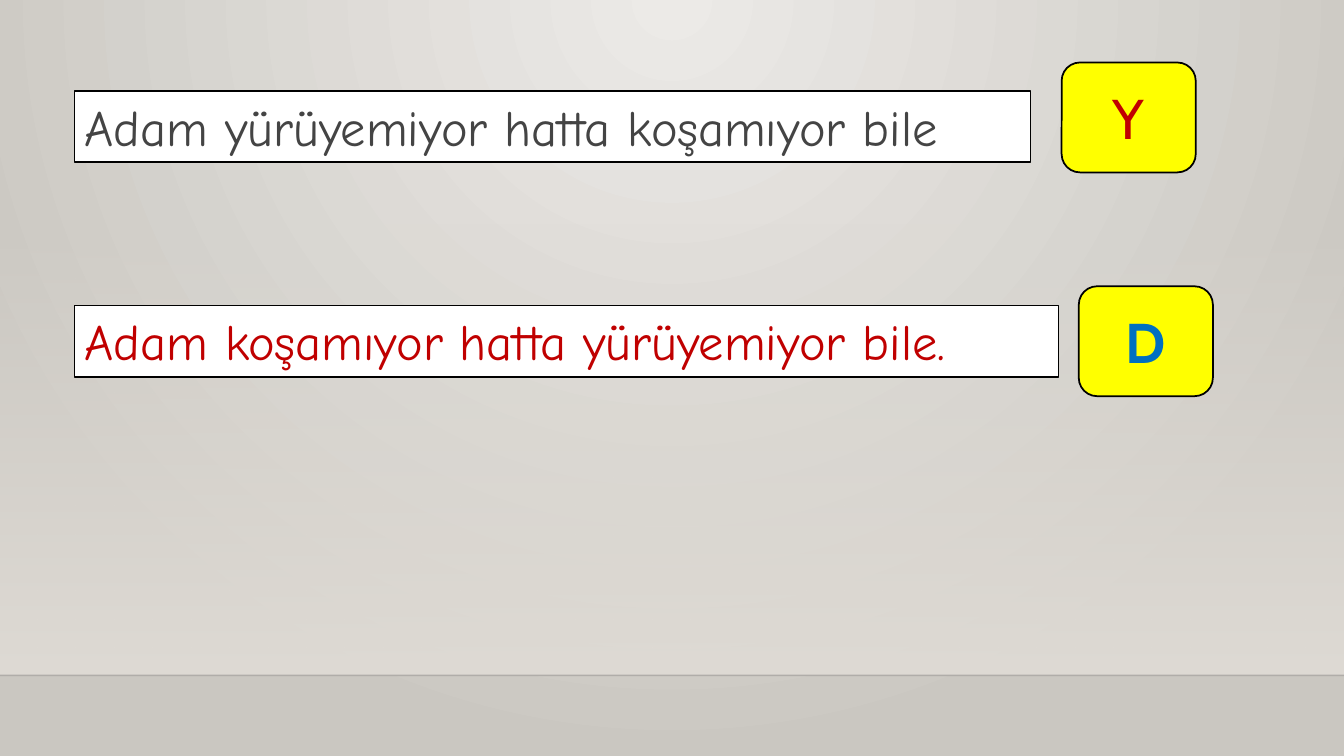
import pptx
import pptx.dml.color
import pptx.enum.shapes
import pptx.enum.text
import pptx.oxml
import pptx.oxml.ns
import pptx.util

Inches = pptx.util.Inches
RGBColor = pptx.dml.color.RGBColor
Shape = pptx.enum.shapes.MSO_SHAPE
Anchor = pptx.enum.text.MSO_ANCHOR
Align = pptx.enum.text.PP_ALIGN
qn = pptx.oxml.ns.qn

WHITE = RGBColor(0xFF, 0xFF, 0xFF)
BLACK = RGBColor(0, 0, 0)
INK = RGBColor(0, 0, 1)
YELLOW = RGBColor(0xFF, 0xFF, 0)
GREY = RGBColor(0x44, 0x44, 0x44)
RED = RGBColor(0xC0, 0, 0)
BLUE = RGBColor(0, 0x70, 0xC0)
PALE = RGBColor(0xEC, 0xEA, 0xE7)
STONE = RGBColor(0xCA, 0xC7, 0xC1)
SAND = RGBColor(0xDF, 0xDB, 0xD5)


def node(text):
    """Parse a DrawingML element."""
    space = 'xmlns:a="http://schemas.openxmlformats.org/drawingml/2006/main"'
    return pptx.oxml.parse_xml(text.replace("XMLNS", space))


def fade(color, share):
    """Give a colour element an opacity in percent."""
    color.append(node(f'<a:alpha XMLNS val="{share * 1000}"/>'))


def blend(fill, first, last):
    """Set a gradient between two colours."""
    fill.gradient()
    for stop, color, place in zip(fill.gradient_stops, (first, last), (0, 1)):
        stop.color.rgb = color
        stop.position = place


def backdrop(slide):
    """Fill the background with light falling from the top centre."""
    blend(slide.background.fill, PALE, STONE)
    lin = next(slide._element.iter(qn("a:lin")))
    lin.getparent().replace(lin, node(
        '<a:path XMLNS path="circle"><a:fillToRect l="43000" t="0" '
        'r="43000" b="100000"/></a:path>'))


def floor(slide, left, top, width, height):
    """Draw the wall haze and the line along its foot."""
    haze = slide.shapes.add_shape(
        Shape.RECTANGLE, left, top, width, height)
    haze.shadow.inherit = False
    haze.line.fill.background()
    blend(haze.fill, SAND, SAND)
    haze.fill.gradient_angle = 270
    fade(next(haze.element.iter(qn("a:srgbClr"))), 0)
    foot = top + height
    edge = slide.shapes.add_connector(
        pptx.enum.shapes.MSO_CONNECTOR.STRAIGHT,
        left, foot, left + width, foot)
    edge.line.width = pptx.util.Pt(1)
    edge.line.color.rgb = INK
    fade(next(edge.element.iter(qn("a:srgbClr"))), 20)
    edge.element.spPr.append(node("<a:effectLst XMLNS/>"))


def panel(slide, kind, box, fill, text, font, size, color, bold=False):
    """Draw an outlined shape with one line of text."""
    shape = slide.shapes.add_shape(kind, *map(Inches, box))
    shape.shadow.inherit = False
    shape.fill.solid()
    shape.fill.fore_color.rgb = fill
    shape.line.color.rgb = BLACK
    shape.line.width = pptx.util.Pt(1.25)
    run = shape.text_frame.paragraphs[0].add_run()
    run.text = text
    run.font.name = font
    run.font.size = pptx.util.Pt(size)
    run.font.color.rgb = color
    run.font.bold = bold
    return shape.text_frame


def phrase(slide, box, text, color):
    """Draw a sentence bar."""
    frame = panel(slide, Shape.RECTANGLE, box, WHITE, text,
                  "Comic Neue", 36, color)
    frame.word_wrap = True
    frame.vertical_anchor = Anchor.TOP
    frame.paragraphs[0].alignment = Align.LEFT


def badge(slide, box, text, color, bold):
    """Draw a rounded verdict badge."""
    frame = panel(slide, Shape.ROUNDED_RECTANGLE, box, YELLOW, text,
                  "Cabin", 40, color, bold)
    frame.vertical_anchor = Anchor.MIDDLE
    frame.paragraphs[0].alignment = Align.CENTER


def main():
    """Build and save the slide."""
    deck = pptx.Presentation()
    deck.slide_width = Inches(13.33)
    deck.slide_height = Inches(7.5)
    slide = deck.slides.add_slide(deck.slide_layouts[6])
    backdrop(slide)
    floor(slide, 0, Inches(2.21), deck.slide_width, Inches(4.49))
    phrase(slide, (0.74, 0.9, 9.48, 0.71),
           "Adam yürüyemiyor hatta koşamıyor bile", GREY)
    phrase(slide, (0.74, 3.03, 9.76, 0.71),
           "Adam koşamıyor hatta yürüyemiyor bile.", RED)
    badge(slide, (10.53, 0.62, 1.33, 1.09), "Y", RED, False)
    badge(slide, (10.7, 2.84, 1.33, 1.09), "D", BLUE, True)
    deck.save("out.pptx")


if __name__ == "__main__":
    main()
